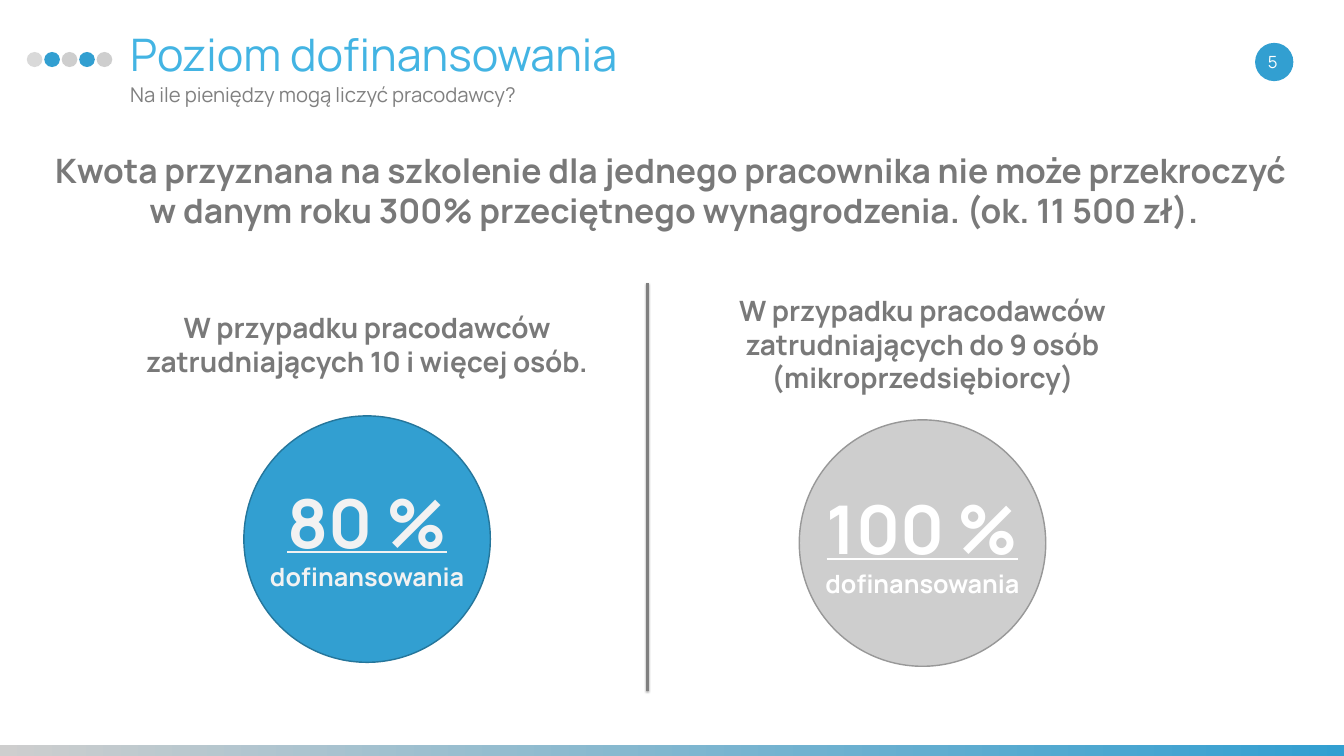
from lxml.etree import SubElement
from pptx import Presentation
from pptx.dml.color import RGBColor
from pptx.enum.shapes import MSO_CONNECTOR, MSO_SHAPE
from pptx.enum.text import MSO_ANCHOR, MSO_AUTO_SIZE, PP_ALIGN
from pptx.oxml.ns import qn
from pptx.util import Cm, Pt

WIDTH, HEIGHT = 67.73, 38.1
BLUE, SILVER, GREY, WHITE = "329FD1", "CECECE", "797979", "FFFFFF"
WIDE = {"margin_left": Cm(0.69), "margin_right": Cm(0.69),
        "margin_top": Cm(0.33), "margin_bottom": Cm(0.33)}
TIGHT = {"margin_left": Cm(0.25), "margin_right": Cm(0.25),
         "margin_top": 0, "margin_bottom": 0}


def paint(color, value):
    color.rgb = RGBColor.from_string(value)


def apply(target, values):
    for name, value in values.items():
        setattr(target, name, value)


def write(shape, lines, color, insets, align=PP_ALIGN.CENTER,
          anchor=MSO_ANCHOR.MIDDLE):
    """Fill a shape with lines given as (text, font values)."""
    frame = shape.text_frame
    apply(frame, {"word_wrap": True, "auto_size": MSO_AUTO_SIZE.NONE,
                  "vertical_anchor": anchor, **insets})
    for i, (text, style) in enumerate(lines):
        para = frame.add_paragraph() if i else frame.paragraphs[0]
        apply(para, {"text": text, "alignment": align, "space_before": 0})
        for run in para.runs:
            apply(run.font, {"name": "Manrope", **style})
            paint(run.font.color, color)


def label(shapes, box, lines, color, insets):
    write(shapes.add_textbox(*map(Cm, box)), lines, color, insets)


def header(shape, box, text, size, color):
    """Move a placeholder into the slide header and format it."""
    apply(shape, dict(zip(("left", "top", "width", "height"), map(Cm, box))))
    write(shape, [(text, {"size": Pt(size)})], color, WIDE,
          PP_ALIGN.LEFT, MSO_ANCHOR.TOP)


def disc(shapes, box, fill, edge=None):
    shape = shapes.add_shape(MSO_SHAPE.OVAL, *map(Cm, box))
    shape.shadow.inherit = False
    shape.fill.solid()
    paint(shape.fill.fore_color, fill)
    if edge:
        shape.line.width = Pt(2)
        paint(shape.line.color, edge)
    else:
        shape.line.fill.background()


def footer(shapes):
    """Gradient strip along the bottom edge."""
    strip = shapes.add_shape(MSO_SHAPE.RECTANGLE, 0, Cm(37.57),
                             Cm(WIDTH), Cm(HEIGHT - 37.57))
    strip.shadow.inherit = False
    strip.line.fill.background()
    strip.fill.gradient()
    strip.fill.gradient_angle = 0
    for stop, color in zip(strip.fill.gradient_stops, (SILVER, BLUE)):
        paint(stop.color, color)


def divide(shapes):
    """Vertical divider with a soft shadow."""
    line = shapes.add_connector(MSO_CONNECTOR.STRAIGHT, Cm(32.61), Cm(34.82),
                                Cm(32.61), Cm(14.27))
    line.line.width = Pt(4.5)
    paint(line.line.color, "808080")
    effects = SubElement(line._element.spPr, qn("a:effectLst"))
    shadow = SubElement(effects, qn("a:outerShdw"), blurRad="40000",
                        dist="23000", dir="5400000", rotWithShape="0")
    black = SubElement(shadow, qn("a:srgbClr"), val="000000")
    SubElement(black, qn("a:alpha"), val="35000")


def panel(shapes, mid, heading, tall, rate, tops, colors):
    """Heading above a circle that shows the funding rate."""
    group = shapes.add_group_shape().shapes
    circle, caption = tops
    fill, edge, ink = colors
    bold = {"bold": True}
    label(group, (mid - 14, 17.34 - tall / 2, 28, tall),
          [(heading, {"size": Pt(40), **bold})], GREY, TIGHT)
    disc(group, (mid - 6.21, circle, 12.42, 12.42), fill, edge)
    label(group, (mid - 5.58, caption, 11.16, 5.64),
          [(rate, {"size": Pt(96), "underline": True, **bold}),
           ("dofinansowania", {"size": Pt(36), **bold})], ink, TIGHT)


def main():
    deck = Presentation()
    deck.slide_width, deck.slide_height = Cm(WIDTH), Cm(HEIGHT)
    slide = deck.slides.add_slide(deck.slide_layouts[0])
    shapes = slide.shapes

    # Header: title, subtitle, dots and page number
    header(shapes.title, (5.87, 1.04, 53.98, 4.06),
           "Poziom dofinansowania", 64, "43B4E3")
    header(slide.placeholders[1], (5.87, 3.81, 53.98, 2.16),
           "Na ile pieniędzy mogą liczyć pracodawcy?", 29, "808080")
    dots = shapes.add_group_shape().shapes
    for i, color in enumerate(("D9D9D9", BLUE, SILVER, BLUE, SILVER)):
        disc(dots, (1.35 + 0.88 * i, 2.62, 0.79, 0.76), color)
    disc(shapes, (63.25, 2.16, 1.93, 1.93), BLUE)
    label(shapes, (62.66, 2.11, 2.95, 2.03), [("5", {"size": Pt(24)})],
          WHITE, WIDE)

    # Main statement
    label(shapes, (1.27, 7.19, 65.4, 4.78),
          [("Kwota przyznana na szkolenie dla jednego pracownika "
            "nie może przekroczyć \vw danym roku 300% przeciętnego "
            "wynagrodzenia. (ok. 11 500 zł).",
            {"size": Pt(48), "bold": True})], GREY, WIDE)

    # Comparison of employers
    panel(shapes, 46.49, "W przypadku pracodawców zatrudniających "
          "do 9 osób (mikroprzedsiębiorcy)", 5.13, "100 %",
          (21.16, 24.54), (SILVER, "989898", WHITE))
    panel(shapes, 18.5, "W przypadku pracodawców zatrudniających "
          "10 i więcej osób.", 3.43, "80 %",
          (20.96, 24.21), (BLUE, "25769B", "F2F2F2"))
    divide(shapes)
    footer(shapes)

    deck.save("out.pptx")


if __name__ == "__main__":
    main()
